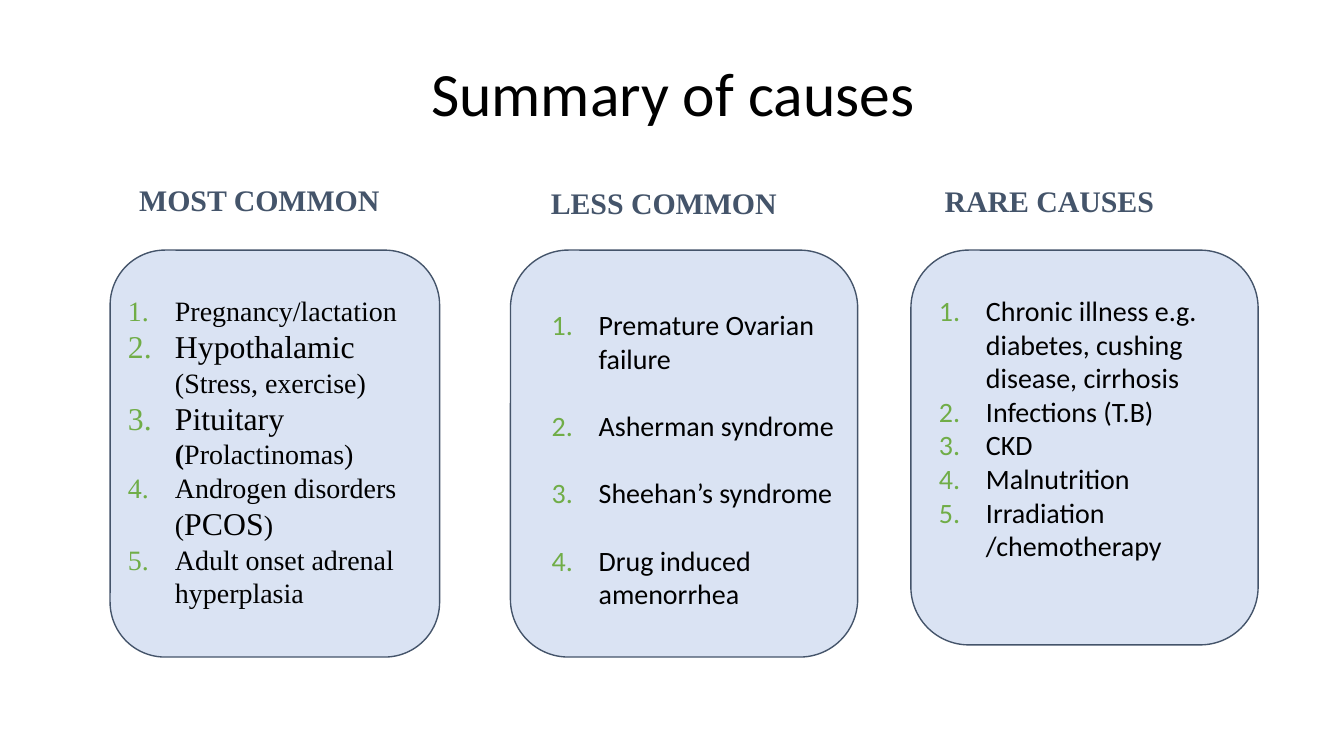
from dataclasses import dataclass

from lxml.etree import SubElement
from pptx import Presentation
from pptx.dml.color import RGBColor
from pptx.enum.shapes import MSO_SHAPE
from pptx.enum.text import MSO_ANCHOR, MSO_AUTO_SIZE, PP_ALIGN
from pptx.oxml.ns import qn
from pptx.util import Pt


@dataclass(frozen=True)
class Theme:
    panel: RGBColor = RGBColor.from_string("DAE3F3")
    accent: RGBColor = RGBColor.from_string("44546A")
    number: RGBColor = RGBColor.from_string("70AD47")
    ink: RGBColor = RGBColor.from_string("000000")
    sans: str = "Calibri"
    serif: str = "Times New Roman"
    title: int = 33
    heading: int = 16
    emphasis: int = 17
    body: int = 15
    inset: float = 7.2


THEME = Theme()


@dataclass(frozen=True)
class Column:
    heading: str
    heading_box: tuple
    panel_box: tuple
    list_box: tuple
    placeholder: int
    font: str
    gap: int
    items: tuple


BIG = {"size": THEME.emphasis}
BOLD = {"bold": True}

COLUMNS = (
    Column("MOST COMMON", (67.5, 90, 173, 34), (59, 134, 176.5, 218),
           (50.5, 150, 198, 185), 1, THEME.serif, 0, (
               [("Pregnancy/lactation", {})],
               [("Hypothalamic", BIG), ("\n", {}), ("(Stress, exercise)", {})],
               [("Pituitary ", BIG), ("(", BOLD), ("Prolactinomas)", {})],
               [("Androgen disorders (", {}), ("PCOS", BIG), (")", {})],
               [("Adult onset adrenal hyperplasia", {})])),
    Column("LESS COMMON", (288, 91.5, 163.5, 34), (273.5, 134, 186, 218),
           (277.5, 157.75, 178.5, 178), 2, THEME.sans, 18, (
               [("Premature Ovarian failure", {})],
               [("Asherman syndrome", {})],
               [("Sheehan’s syndrome", {})],
               [("Drug induced amenorrhea", {})])),
    Column("RARE CAUSES", (499, 90.75, 163.5, 34), (488, 134, 186, 211.5),
           (485, 150, 186, 160), 4, THEME.sans, 0, (
               [("Chronic illness e.g. diabetes, cushing disease, cirrhosis", {})],
               [("Infections (T.B)", {})],
               [("CKD", {})],
               [("Malnutrition", {})],
               [("Irradiation /chemotherapy", {})])),
)


def place(shape, box):
    shape.left, shape.top, shape.width, shape.height = map(Pt, box)


def prepare_frame(shape, anchor=MSO_ANCHOR.TOP):
    frame = shape.text_frame
    frame.word_wrap = True
    frame.auto_size = MSO_AUTO_SIZE.NONE
    frame.vertical_anchor = anchor
    frame.margin_left = frame.margin_right = Pt(THEME.inset)
    frame.margin_top = frame.margin_bottom = Pt(THEME.inset)
    return frame


def style_font(font, name, size, color, bold=False):
    font.name, font.size, font.bold = name, Pt(size), bold
    font.color.rgb = color


def set_title(slide, text):
    title = slide.shapes.title
    place(title, (57, 29, 607, 45))
    paragraph = prepare_frame(title, MSO_ANCHOR.MIDDLE).paragraphs[0]
    paragraph.text = text
    paragraph.alignment = PP_ALIGN.CENTER
    paragraph.line_spacing = 0.9
    style_font(paragraph.font, THEME.sans, THEME.title, THEME.ink)


def add_panel(slide, box):
    panel = slide.shapes.add_shape(MSO_SHAPE.ROUNDED_RECTANGLE, *map(Pt, box))
    panel.shadow.inherit = False
    panel.fill.solid()
    panel.fill.fore_color.rgb = THEME.panel
    panel.line.color.rgb = THEME.accent
    panel.line.width = Pt(0.75)


def add_heading(slide, text, box):
    heading = slide.shapes.add_textbox(*map(Pt, box))
    paragraph = prepare_frame(heading).paragraphs[0]
    paragraph.text = text
    style_font(paragraph.font, THEME.serif, THEME.heading, THEME.accent, True)


def add_number(paragraph, font_name):
    properties = paragraph._p.get_or_add_pPr()
    properties.set("marL", str(Pt(36)))
    properties.set("indent", str(Pt(-25.2)))
    color = SubElement(properties, qn("a:buClr"))
    SubElement(color, qn("a:srgbClr"), val=str(THEME.number))
    SubElement(properties, qn("a:buFont"), typeface=font_name)
    SubElement(properties, qn("a:buAutoNum"), type="arabicPeriod")


def fill_item(paragraph, pieces, column):
    add_number(paragraph, column.font)
    paragraph.alignment = PP_ALIGN.LEFT
    paragraph.space_before = Pt(0)
    paragraph.space_after = Pt(column.gap)
    style_font(paragraph.font, column.font, THEME.body, THEME.ink)
    for text, emphasis in pieces:
        if text == "\n":
            paragraph.add_line_break()
            continue
        run = paragraph.add_run()
        run.text = text
        if "size" in emphasis:
            run.font.size = Pt(emphasis["size"])
        if "bold" in emphasis:
            run.font.bold = True


def fill_list(slide, column):
    body = slide.placeholders[column.placeholder]
    place(body, column.list_box)
    slide.shapes._spTree.append(body._element)
    frame = prepare_frame(body)
    for index, pieces in enumerate(column.items):
        paragraph = frame.add_paragraph() if index else frame.paragraphs[0]
        fill_item(paragraph, pieces, column)


def main():
    presentation = Presentation()
    presentation.slide_width, presentation.slide_height = Pt(720), Pt(405)
    slide = presentation.slides.add_slide(
        presentation.slide_layouts.get_by_name("Comparison"))
    unused = slide.placeholders[3]._element
    unused.getparent().remove(unused)
    set_title(slide, "Summary of causes")
    for column in COLUMNS:
        add_panel(slide, column.panel_box)
        add_heading(slide, column.heading, column.heading_box)
        fill_list(slide, column)
    presentation.save("out.pptx")


if __name__ == "__main__":
    main()
